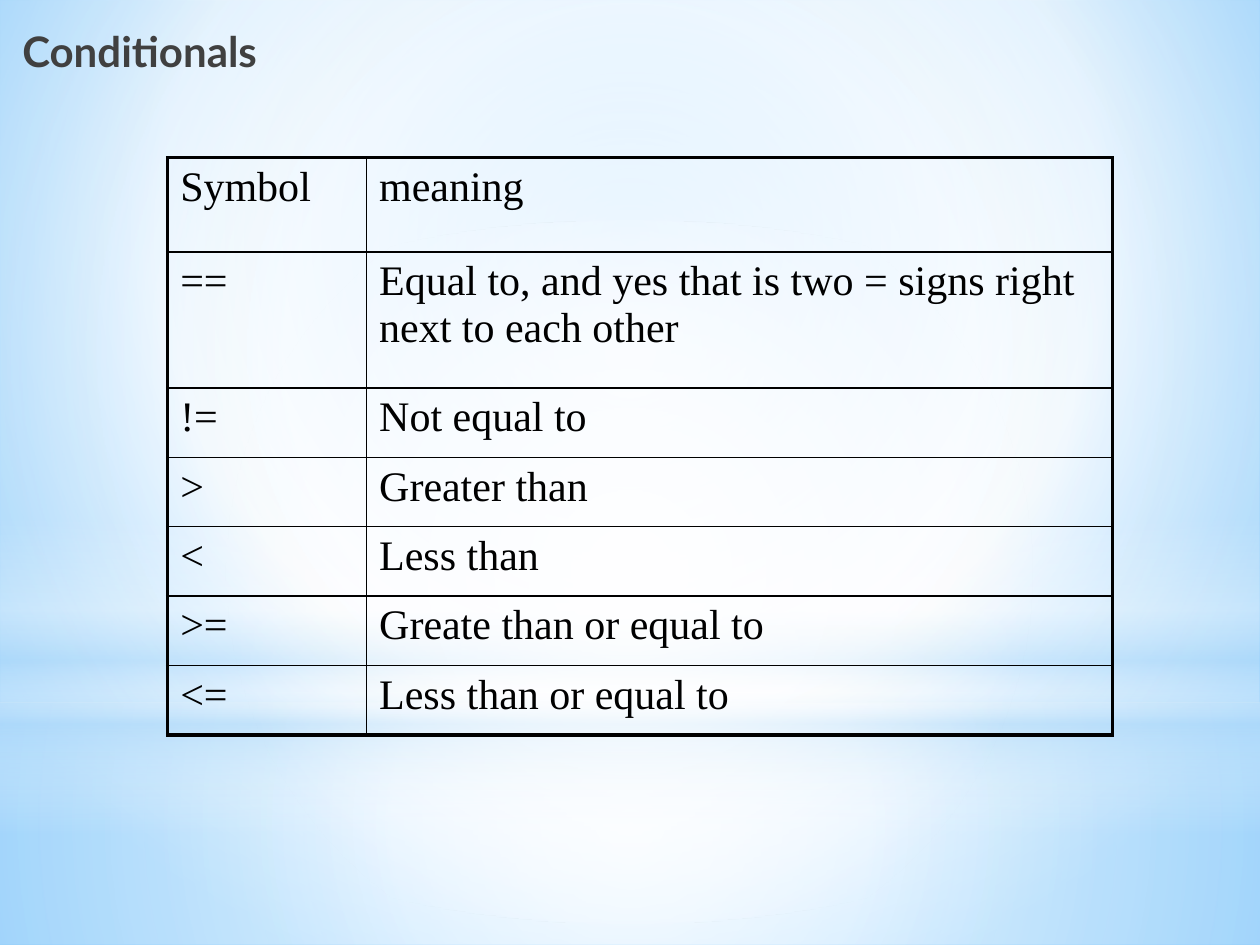
import pptx
import pptx.dml.color
import pptx.enum.shapes
import pptx.enum.text
import pptx.oxml
import pptx.oxml.ns
import pptx.util
from pptx.util import Cm

COLORS = {
    "white": "FFFFFF",
    "sky": "9ED5FF",
    "azure": "5BB9FF",
    "haze": "B4DCFA",
    "title": "404040",
    "ink": "000000",
}
SLIDE_WIDTH, SLIDE_HEIGHT = 25.4, 19.05
CENTER = (50, 50, 50, 50)
SHAPES = pptx.enum.shapes.MSO_SHAPE

# Gradient stops: position %, colour, opacity %
BACKGROUND_STOPS = [(0, "sky", 100), (60, "white", 100), (100, "azure", 100)]
GLOWS = [
    # preset, top, height, stops, focus (None means a vertical gradient)
    (SHAPES.RECTANGLE, 14.17, 4.88,
     [(0, "white", 91), (37, "white", 76), (100, "haze", 79)], CENTER),
    (SHAPES.RECTANGLE, 0, 14.17,
     [(0, "white", 89), (48, "white", 62), (100, "haze", 79)], CENTER),
    (SHAPES.RECTANGLE, 10.46, 6.35,
     [(0, "white", 0), (29, "white", 30), (45, "haze", 40),
      (55, "white", 26), (65, "haze", 60), (100, "white", 0)], None),
    (SHAPES.OVAL, 4.45, 14.17, [(0, "white", 100), (56, "white", 0)], CENTER),
]

TITLE_FORMAT = {"name": "Lato", "size": pptx.util.Pt(24), "bold": True}
CELL_FORMAT = {"name": "Times New Roman", "size": pptx.util.Pt(24), "bold": False}

ROWS = [
    ("Symbol", "meaning"),
    ("==", "Equal to, and yes that is two = signs right next to each other"),
    ("!=", "Not equal to"),
    (">", "Greater than"),
    ("<", "Less than"),
    (">=", "Greate than or equal to"),
    ("<=", "Less than or equal to"),
]
COLUMN_WIDTHS = [4.01, 15.04]
ROW_HEIGHTS = [1.9, 2.74] + [1.4] * 5
OUTER_LINE, INNER_LINE = 2.25, 1


def parse_xml(tag, content):
    namespace = pptx.oxml.ns.nsdecls("a")
    return pptx.oxml.parse_xml(f"<a:{tag} {namespace}>{content}</a:{tag}>")


def apply_gradient(fill, owner, stops, focus):
    """Give the fill of the owner element its stops and direction."""
    fill.gradient()
    old_gradient = owner.find(".//" + pptx.oxml.ns.qn("a:gradFill"))
    stop_xml = "".join(
        f'<a:gs pos="{position * 1000}"><a:srgbClr val="{COLORS[color]}">'
        f'<a:alpha val="{opacity * 1000}"/></a:srgbClr></a:gs>'
        for position, color, opacity in stops
    )
    if focus:
        left, top, right, bottom = (value * 1000 for value in focus)
        direction = (f'<a:path path="circle"><a:fillToRect l="{left}" t="{top}" '
                     f'r="{right}" b="{bottom}"/></a:path>')
    else:
        direction = '<a:lin ang="5400000" scaled="0"/>'
    gradient = parse_xml("gradFill", f"<a:gsLst>{stop_xml}</a:gsLst>{direction}")
    old_gradient.getparent().replace(old_gradient, gradient)


def add_glow(slide, preset, top, height, stops, focus):
    shape = slide.shapes.add_shape(preset, 0, Cm(top), Cm(SLIDE_WIDTH), Cm(height))
    shape.shadow.inherit = False
    shape.line.fill.background()
    apply_gradient(shape.fill, shape.element, stops, focus)


def write_text(paragraph, text, font_format, color):
    run = paragraph.add_run()
    run.text = text
    for name, value in font_format.items():
        setattr(run.font, name, value)
    run.font.color.rgb = pptx.dml.color.RGBColor.from_string(COLORS[color])


def add_title(slide, text):
    shape = slide.shapes.add_textbox(Cm(0.2), Cm(0.43), Cm(23.93), Cm(1.19))
    shape.text_frame.word_wrap = True
    shape.text_frame.vertical_anchor = pptx.enum.text.MSO_ANCHOR.MIDDLE
    write_text(shape.text_frame.paragraphs[0], text, TITLE_FORMAT, "title")


def set_borders(cell, outer_sides):
    properties = cell._tc.get_or_add_tcPr()
    for side in "LRTB":
        width = OUTER_LINE if side in outer_sides else INNER_LINE
        line = parse_xml(
            f"ln{side}",
            f'<a:solidFill><a:srgbClr val="{COLORS["ink"]}"/></a:solidFill>')
        line.set("w", str(pptx.util.Pt(width)))
        properties.append(line)


def add_symbol_table(slide):
    table = slide.shapes.add_table(
        len(ROWS), len(COLUMN_WIDTHS), Cm(3.38), Cm(3.18),
        Cm(sum(COLUMN_WIDTHS)), Cm(sum(ROW_HEIGHTS))).table
    table.first_row = table.horz_banding = False
    for column, width in zip(table.columns, COLUMN_WIDTHS):
        column.width = Cm(width)
    for row_index, (texts, height) in enumerate(zip(ROWS, ROW_HEIGHTS)):
        table.rows[row_index].height = Cm(height)
        for column_index, text in enumerate(texts):
            cell = table.cell(row_index, column_index)
            outer_sides = "LR"[column_index]
            if row_index == 0:
                outer_sides += "T"
            if row_index == len(ROWS) - 1:
                outer_sides += "B"
            set_borders(cell, outer_sides)
            cell.fill.background()
            paragraph = cell.text_frame.paragraphs[0]
            paragraph.space_before = pptx.util.Pt(4.8)
            write_text(paragraph, text, CELL_FORMAT, "ink")


def main():
    presentation = pptx.Presentation()
    presentation.slide_width = Cm(SLIDE_WIDTH)
    presentation.slide_height = Cm(SLIDE_HEIGHT)
    slide = presentation.slides.add_slide(presentation.slide_layouts[6])

    # Background and soft glows
    apply_gradient(slide.background.fill, slide.element,
                   BACKGROUND_STOPS, (20, 10, 20, 60))
    for glow in GLOWS:
        add_glow(slide, *glow)

    # Title and table of comparison symbols
    add_title(slide, "Conditionals")
    add_symbol_table(slide)

    presentation.save("out.pptx")


if __name__ == "__main__":
    main()
